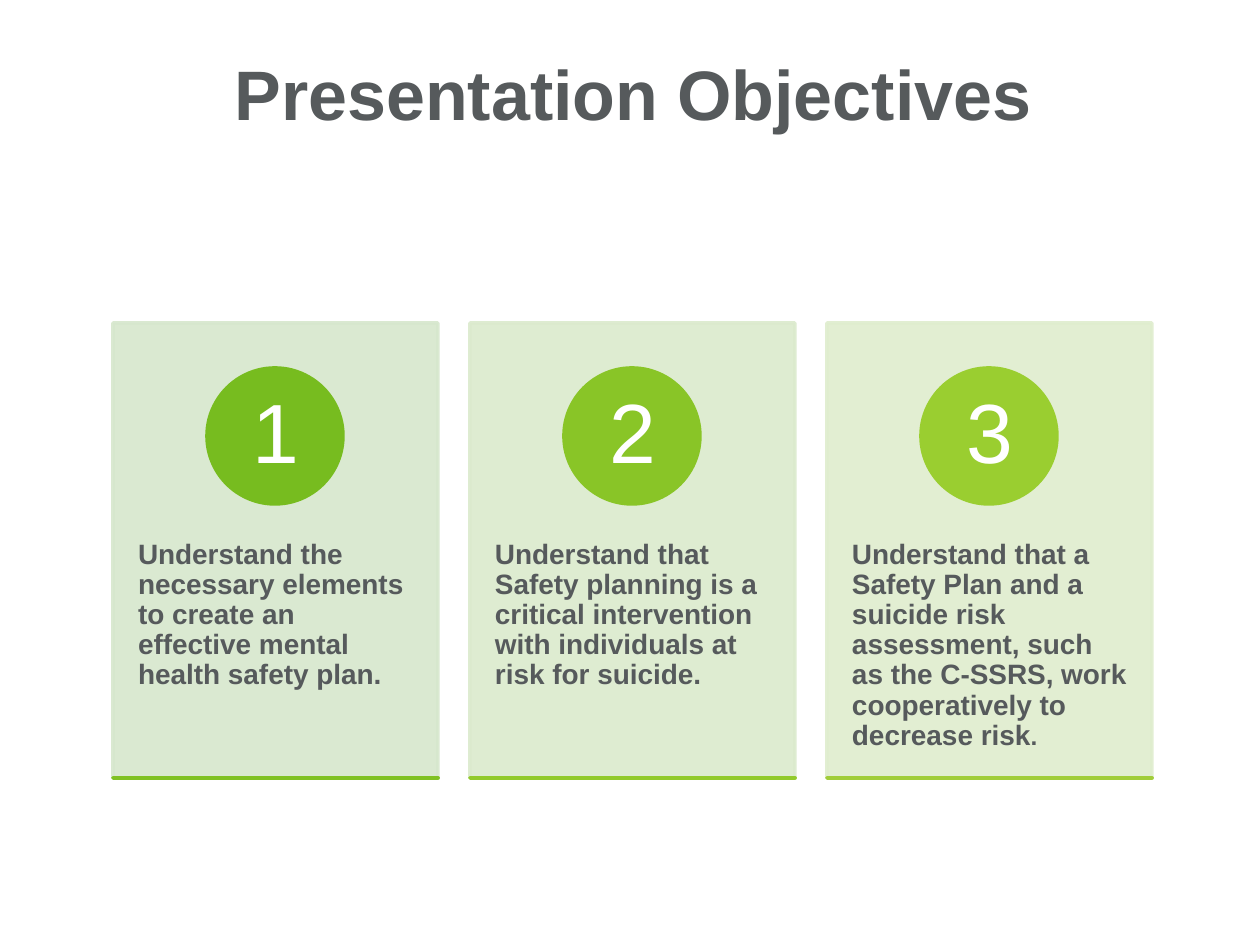
from lxml import etree
from pptx import Presentation, util as u
from pptx.dml.color import RGBColor
from pptx.enum import shapes, text
from pptx.oxml import ns

PX = 914400 // 126
GRAY = RGBColor(0x56, 0x5A, 0x5C)
WHITE = RGBColor(0xFF, 0xFF, 0xFF)
SHAPE = shapes.MSO_SHAPE
ALIGN = text.PP_ALIGN
ANCHOR = text.MSO_ANCHOR

# Card: tint, disc colour, rule colour, text runs with sizes
CARDS = [
    (RGBColor(0xD6, 0xE7, 0xCD), RGBColor(0x77, 0xBC, 0x1F),
     RGBColor(0x80, 0xC1, 0x23),
     [("Understand the necessary elements to create an effective "
       "mental health safety plan.", 16)]),
    (RGBColor(0xDB, 0xEA, 0xCD), RGBColor(0x89, 0xC5, 0x27),
     RGBColor(0x92, 0xCA, 0x2C),
     [("Understand that Safety planning is a critical intervention "
       "with individuals at risk for suicide.", 16)]),
    (RGBColor(0xDF, 0xED, 0xCE), RGBColor(0x9A, 0xCE, 0x30),
     RGBColor(0xA1, 0xCD, 0x3A),
     [("Understand that a Safety Plan and a suicide risk assessment, "
       "such as the C-SSRS, work cooperatively to decrease risk", 16),
      (".", 14)]),
]


def scale(*vals):
    return [u.Emu(v * PX) for v in vals]


def fade(color):
    """Make a solid colour 90% opaque."""
    for node in color.iter(ns.qn("a:srgbClr")):
        etree.SubElement(node, ns.qn("a:alpha")).set("val", "90000")


def shape(slide, kind, box, color, clear=False):
    item = slide.shapes.add_shape(kind, *scale(*box))
    item.shadow.inherit = False
    item.fill.solid()
    item.fill.fore_color.rgb = color
    item.line.color.rgb = color
    item.line.width = u.Pt(2)
    if clear:
        fade(item._element.spPr)
    return item


def label(slide, box, runs, color, pad, bold=False, align=ALIGN.LEFT,
          anchor=ANCHOR.TOP, space=0.9):
    frame = slide.shapes.add_textbox(*scale(*box)).text_frame
    frame.word_wrap = True
    frame.vertical_anchor = anchor
    side, top = scale(*pad)
    frame.margin_left = frame.margin_right = side
    frame.margin_top = frame.margin_bottom = top
    para = frame.paragraphs[0]
    para.alignment = align
    para.line_spacing = space
    for words, size in runs:
        run = para.add_run()
        run.text = words
        run.font.name = "Arial"
        run.font.size = u.Pt(size)
        run.font.bold = bold
        run.font.color.rgb = color


def title(slide, box):
    label(slide, box, [("Presentation Objectives", 40)], GRAY, (12, 12),
          bold=True, align=ALIGN.CENTER, space=1.0)


def card(slide, box, num, tint, disc, rule, runs):
    left, top, wide, high = box
    # Panel and its text
    shape(slide, SHAPE.RECTANGLE, box, tint, clear=True)
    label(slide, (left, top + 172, wide, 273), runs, GRAY, (25, 45), bold=True)
    # Numbered disc
    size, inner = 136, 97
    shape(slide, SHAPE.OVAL,
          (left + (wide - size) // 2, top + 45, size, size), disc)
    label(slide, (left + (wide - inner) // 2, top + 65, inner, inner),
          [(str(num), 48)], WHITE, (10, 1), align=ALIGN.CENTER,
          anchor=ANCHOR.MIDDLE)
    # Bottom rule
    shape(slide, SHAPE.RECTANGLE, (left, top + high, wide, 0), rule)


def main():
    deck = Presentation()
    deck.slide_width, deck.slide_height = u.Inches(10), u.Inches(7.5)
    slide = deck.slides.add_slide(deck.slide_layouts[6])
    left, wide, cols, gap = 113, 1040, len(CARDS), 32
    title(slide, (left, 39, wide, 200))
    each = (wide - gap * (cols - 1)) // cols
    for i, parts in enumerate(CARDS):
        card(slide, (left + i * (each + gap), 323, each, 455), i + 1, *parts)
    deck.save("out.pptx")


if __name__ == "__main__":
    main()
